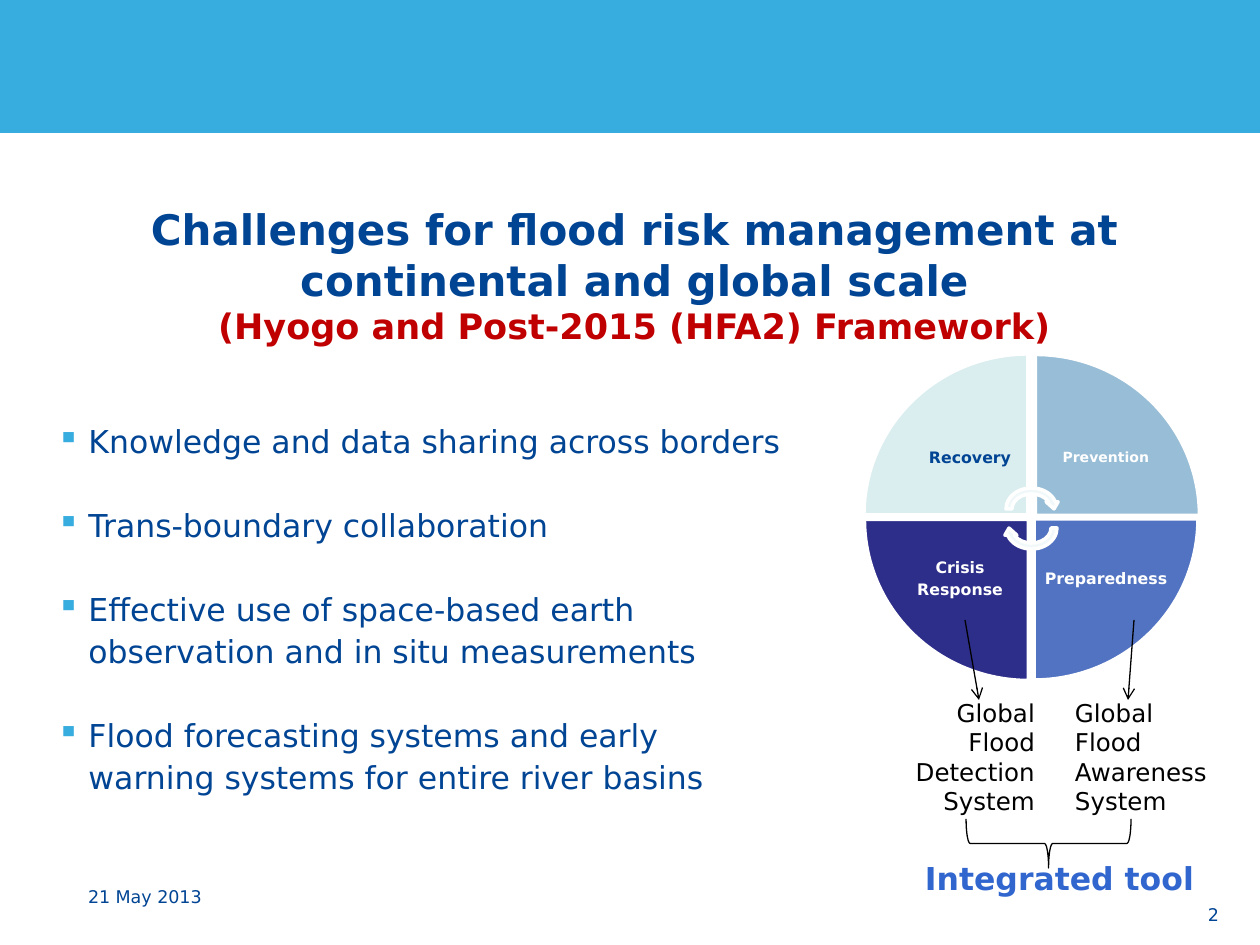
from lxml import etree
from pptx import Presentation
from pptx import util as u
from pptx.dml.color import RGBColor
from pptx.enum import shapes, text
from pptx.oxml.ns import qn

PX = 914400 / 126
FONT = "DejaVu Sans"
NAVY, SKY, WHITE, BLACK = "004494", "37ACDE", "FFFFFF", "000000"
LEFT, CENTER, RIGHT = text.PP_ALIGN.LEFT, text.PP_ALIGN.CENTER, text.PP_ALIGN.RIGHT
SHAPE = shapes.MSO_SHAPE

BULLETS = [
    "Knowledge and data sharing across borders",
    "Trans-boundary collaboration",
    "Effective use of space-based earth observation and in situ measurements",
    "Flood forecasting systems and early warning systems for entire river basins",
]
# wedge box, rotation, fill, label box, label lines, label size, label colour
PHASES = [
    ((864, 354, 164, 161), 0, "DAEDEF", (912, 402, 116, 113), ["Recovery"], 9, NAVY),
    ((1037, 353, 161, 164), 90, "98BDD6", (1036, 402, 140, 113), ["Prevention"], 8, WHITE),
    ((1034, 519, 164, 161), 180, "5273C1", (1027, 523, 158, 113), ["Preparedness"], 9, WHITE),
    ((866, 518, 161, 164), 270, "2D2D8A", (892, 523, 136, 113), ["Crisis", "Response"], 9, WHITE),
]


def emu(*lengths):
    return [u.Emu(round(length * PX)) for length in lengths]


def color(hex_string):
    return RGBColor.from_string(hex_string)


def add_run(paragraph, words, size, hex_string, bold=False):
    run = paragraph.add_run()
    run.text = words
    run.font.name = FONT
    run.font.size = u.Pt(size)
    run.font.bold = bold
    run.font.color.rgb = color(hex_string)


def add_frame(slide, box, inset=(0, 0), anchor=text.MSO_ANCHOR.TOP):
    """Add a wrapping text box with (horizontal, vertical) insets; return its text frame."""
    frame = slide.shapes.add_textbox(*emu(*box)).text_frame
    frame.word_wrap = True
    frame.vertical_anchor = anchor
    frame.margin_left = frame.margin_right = emu(inset[0])[0]
    frame.margin_top = frame.margin_bottom = emu(inset[1])[0]
    return frame


def add_paragraphs(frame, lines, size, hex_string, align=LEFT, bold=False):
    for index, line in enumerate(lines):
        paragraph = frame.add_paragraph() if index else frame.paragraphs[0]
        paragraph.alignment = align
        add_run(paragraph, line, size, hex_string, bold)
    return frame.paragraphs


def add_shape(slide, kind, box, fill=None, line=None, width=0.75, rotation=0):
    shape = slide.shapes.add_shape(kind, *emu(*box))
    shape.shadow.inherit = False
    shape.rotation = rotation
    if fill:
        shape.fill.solid()
        shape.fill.fore_color.rgb = color(fill)
    else:
        shape.fill.background()
    shape.line.color.rgb = color(line)
    shape.line.width = u.Pt(width)


def add_arrow(slide, start, end):
    connector = slide.shapes.add_connector(shapes.MSO_CONNECTOR.STRAIGHT, *emu(*start, *end))
    connector.line.color.rgb = color(BLACK)
    connector.line.width = u.Pt(0.75)
    etree.SubElement(connector.line._get_or_add_ln(), qn("a:tailEnd"), type="arrow")
    etree.SubElement(connector._element.spPr, qn("a:effectLst"))


def add_bullet(paragraph):
    properties = paragraph._p.get_or_add_pPr()
    indent = round(0.25 * 914400)
    properties.set("marL", str(indent))
    properties.set("indent", str(-indent))
    bullet_color = etree.SubElement(properties, qn("a:buClr"))
    etree.SubElement(bullet_color, qn("a:srgbClr"), val=SKY)
    etree.SubElement(properties, qn("a:buChar"), char="▪")


def add_title(slide):
    paragraph = add_frame(slide, (92, 204, 1085, 144)).paragraphs[0]
    paragraph.alignment = CENTER
    add_run(paragraph, "Challenges for flood risk management at continental and global scale",
            24, NAVY, True)
    paragraph.add_line_break()
    add_run(paragraph, "(Hyogo and Post-2015 (HFA2) Framework)", 20, "C00000", True)


def add_challenges(slide):
    frame = add_frame(slide, (57, 418, 725, 425))
    for paragraph in add_paragraphs(frame, BULLETS, 18, NAVY):
        paragraph.line_spacing = u.Pt(24)
        paragraph.space_after = u.Pt(24)
        add_bullet(paragraph)


def add_cycle(slide):
    for box, rotation, fill, label_box, lines, size, ink in PHASES:
        add_shape(slide, SHAPE.PIE_WEDGE, box, fill, WHITE, 2, rotation)
        frame = add_frame(slide, label_box, (11, 11), text.MSO_ANCHOR.MIDDLE)
        for paragraph in add_paragraphs(frame, lines, size, ink, CENTER, True):
            paragraph.line_spacing = 0.9
            paragraph.space_after = u.Pt(3)
    for top, rotation in ((485, 0), (504, 180)):
        add_shape(slide, SHAPE.CIRCULAR_ARROW, (1003, top, 57, 48), "F1F8F9", WHITE, 2, rotation)


def add_systems(slide):
    inset = (13, 6)
    add_paragraphs(add_frame(slide, (883, 692, 165, 161), inset),
                   ["Global Flood Detection", "System"], 14, BLACK, RIGHT)
    add_paragraphs(add_frame(slide, (1062, 692, 174, 131), inset),
                   ["Global Flood Awareness System"], 14, BLACK)
    add_paragraphs(add_frame(slide, (912, 853, 318, 50), inset),
                   ["Integrated tool"], 18, "3166CF", bold=True)
    add_arrow(slide, (965, 620), (979, 700))
    add_arrow(slide, (1134, 620), (1128, 700))
    add_shape(slide, SHAPE.RIGHT_BRACE, (1024, 761, 49, 165), line=BLACK, rotation=90)


def main():
    presentation = Presentation()
    presentation.slide_width, presentation.slide_height = emu(1260, 945)
    slide = presentation.slides.add_slide(presentation.slide_layouts[6])
    add_shape(slide, SHAPE.RECTANGLE, (0, 0, 1260, 132), SKY, SKY)
    add_title(slide)
    add_challenges(slide)
    add_paragraphs(add_frame(slide, (925, 904, 294, 21)), ["2"], 10, NAVY, RIGHT)
    add_paragraphs(add_frame(slide, (88, 886, 294, 21)), ["21 May 2013"], 10, NAVY)
    add_cycle(slide)
    add_systems(slide)
    presentation.save("out.pptx")


if __name__ == "__main__":
    main()
